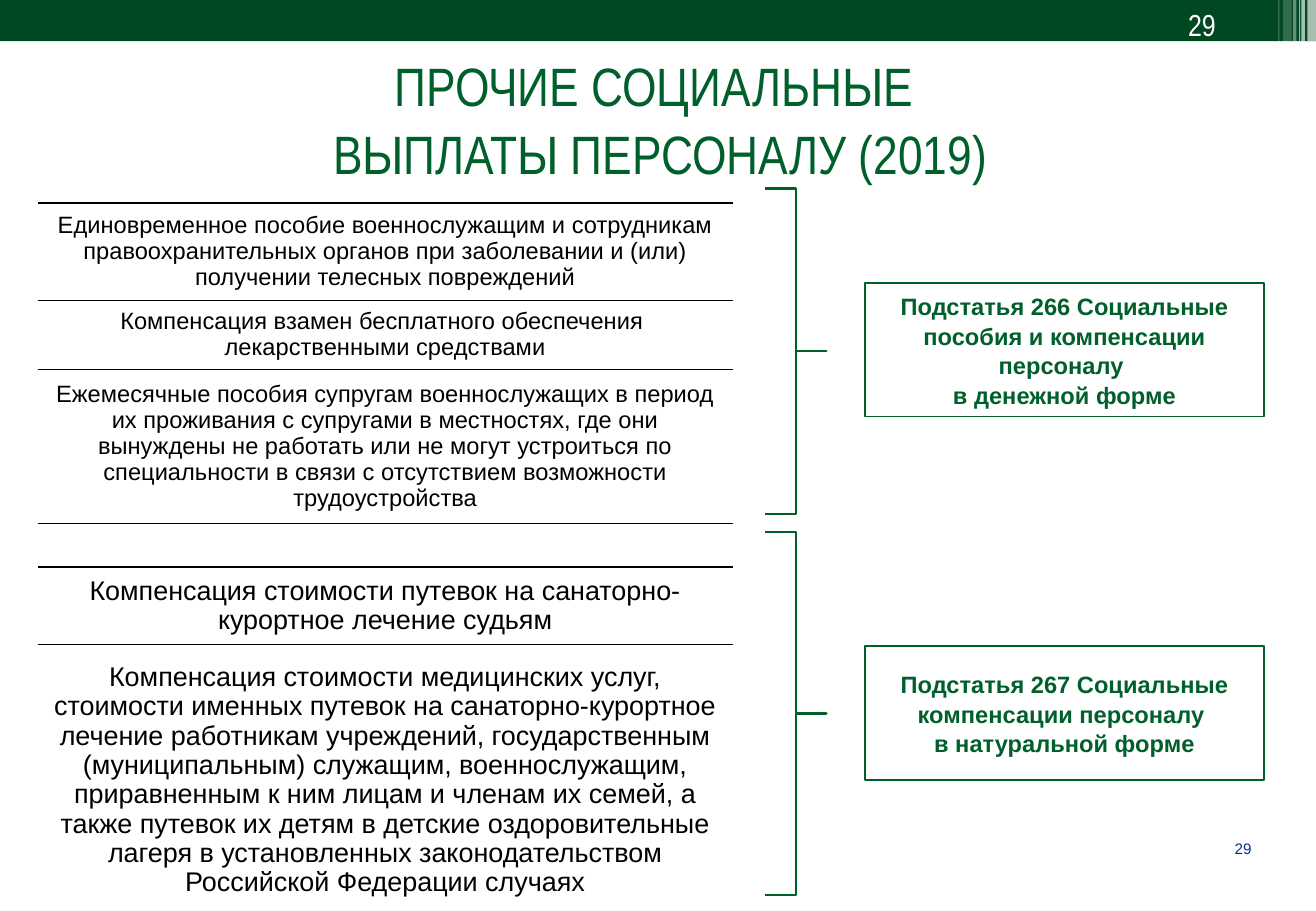
import pptx
import pptx.util
import pptx.dml.color
import pptx.enum.shapes
import pptx.enum.text
import pptx.oxml
import pptx.oxml.ns

Inches = pptx.util.Inches
Pt = pptx.util.Pt
RGBColor = pptx.dml.color.RGBColor
Shape = pptx.enum.shapes.MSO_SHAPE
Align = pptx.enum.text.PP_ALIGN
Anchor = pptx.enum.text.MSO_ANCHOR

BANNER = RGBColor(0x00, 0x48, 0x21)
GREEN = RGBColor(0x00, 0x60, 0x2B)
BLUE = RGBColor(0x00, 0x33, 0x8D)
BLACK = RGBColor(0, 0, 0)
WHITE = RGBColor(255, 255, 255)
WIDTH, HEIGHT = 10.83, 7.5

deck = pptx.Presentation()
deck.slide_width, deck.slide_height = Inches(WIDTH), Inches(HEIGHT)
page = deck.slides.add_slide(deck.slide_layouts[6])


def write(frame, lines, size, color, font="Arial", align=Align.CENTER, bold=False, spacing=1.0):
    frame.word_wrap = True
    for number, line in enumerate(lines):
        para = frame.paragraphs[0] if number == 0 else frame.add_paragraph()
        para.text = line
        para.alignment = align
        para.line_spacing = spacing
        para.font.name, para.font.size = font, Pt(size)
        para.font.bold, para.font.color.rgb = bold, color


def draw(kind, place, fill=None, line=None, weight=1):
    shape = page.shapes.add_shape(kind, *map(Inches, place))
    shape.shadow.inherit = False
    if fill is None:
        shape.fill.background()
    else:
        shape.fill.solid()
        shape.fill.fore_color.rgb = fill
    if line is None:
        shape.line.fill.background()
    else:
        shape.line.color.rgb = line
        shape.line.width = Pt(weight)
    return shape


draw(Shape.RECTANGLE, (0, 0, WIDTH, 0.34), BANNER)
stripes = [
    (10.76, 0.07, 0.34, 65), (10.71, 0.03, 0.34, 65), (10.69, 0.01, 0.34, 60),
    (10.64, 0.03, 0.34, 40), (10.56, 0.07, 0.36, 20), (10.52, 0.01, 0.36, 30),
]
for left, width, height, opacity in stripes:
    stripe = draw(Shape.RECTANGLE, (left, 0, width, height), WHITE)
    tint = stripe.fill._xPr.find(".//" + pptx.oxml.ns.qn("a:srgbClr"))
    tint.append(pptx.oxml.parse_xml(
        f'<a:alpha {pptx.oxml.ns.nsdecls("a")} val="{opacity * 1000}"/>'))

footer = page.shapes.add_textbox(*map(Inches, (9.87, 6.91, 0.43, 0.16))).text_frame
footer.margin_left = footer.margin_right = footer.margin_top = footer.margin_bottom = 0
write(footer, ["29"], 9, BLUE, align=Align.RIGHT)
counter = page.shapes.add_textbox(*map(Inches, (9.68, 0, 0.9, 0.4)))
write(counter.text_frame, ["29"], 18, WHITE, "Arial Narrow", Align.LEFT)
title = page.shapes.add_textbox(*map(Inches, (0.02, 0.36, WIDTH, 1.18)))
write(title.text_frame, ["ПРОЧИЕ СОЦИАЛЬНЫЕ ", "ВЫПЛАТЫ ПЕРСОНАЛУ (2019)"],
      32, GREEN, "Arial Narrow", spacing=1.05)

payments = [
    (0.36, 14, [], 1.5),
    (0.8, 14, ["Единовременное пособие военнослужащим и сотрудникам правоохранительных органов "
               "при заболевании и (или) получении телесных повреждений"], 0.5),
    (0.57, 14, ["Компенсация взамен бесплатного обеспечения ", "лекарственными средствами"], 0.5),
    (1.27, 14, ["Ежемесячные пособия супругам военнослужащих в период их проживания с супругами "
                "в местностях, где они вынуждены не работать или не могут устроиться по "
                "специальности в связи с отсутствием возможности трудоустройства"], 0.5),
    (0.36, 14, [], 1.5),
    (0.64, 16, ["Компенсация стоимости путевок на санаторно-курортное лечение судьям"], 0.5),
    (2.23, 16, ["Компенсация стоимости медицинских услуг, стоимости именных путевок на "
                "санаторно-курортное лечение работникам учреждений, государственным "
                "(муниципальным) служащим, военнослужащим, приравненным к ним лицам и членам "
                "их семей, а также путевок их детям в детские оздоровительные лагеря в "
                "установленных законодательством Российской Федерации случаях"], 0.5),
]
table = page.shapes.add_table(len(payments), 2, *map(Inches, (0.31, 1.31, 6.22, 6.23))).table
table.first_row = table.horz_banding = False
table.columns[0].width, table.columns[1].width = Inches(5.72), Inches(0.5)
above = 0
for row, (height, size, lines, below) in enumerate(payments):
    table.rows[row].height = Inches(height)
    for column in range(2):
        cell = table.cell(row, column)
        cell.vertical_anchor = Anchor.MIDDLE
        cell.margin_left = cell.margin_right = Inches(0.11)
        cell.margin_top = cell.margin_bottom = Inches(0.05 if lines else 0)
        edges = {"lnL": 0, "lnR": 0, "lnT": above, "lnB": below}
        for edge, weight in edges.items():
            visible = weight and column == 0
            paint = '<a:solidFill><a:srgbClr val="000000"/></a:solidFill>' if visible else "<a:noFill/>"
            cell._tc.get_or_add_tcPr().append(pptx.oxml.parse_xml(
                f'<a:{edge} {pptx.oxml.ns.nsdecls("a")} w="{Pt(weight)}">{paint}</a:{edge}>'))
        cell.fill.background()
    write(table.cell(row, 0).text_frame, lines, size, BLACK, spacing=0.98)
    above = below

articles = [
    (2.33, 1.55, 2.68, ["Подстатья 266 Социальные пособия и компенсации персоналу ",
                        "в денежной форме"]),
    (5.32, 4.38, 2.99, ["Подстатья 267 Социальные компенсации персоналу ",
                        "в натуральной форме"]),
]
for box_top, brace_top, brace_height, lines in articles:
    box = draw(Shape.RECTANGLE, (7.12, box_top, 3.28, 1.1), WHITE, GREEN)
    box.text_frame.vertical_anchor = Anchor.MIDDLE
    write(box.text_frame, lines, 14, GREEN, bold=True, spacing=1.05)
    brace = draw(Shape.RIGHT_BRACE, (6.3, brace_top, 0.5, brace_height), line=GREEN, weight=1.5)
    brace.adjustments[0], brace.adjustments[1] = 0, 0.5

deck.save("out.pptx")
